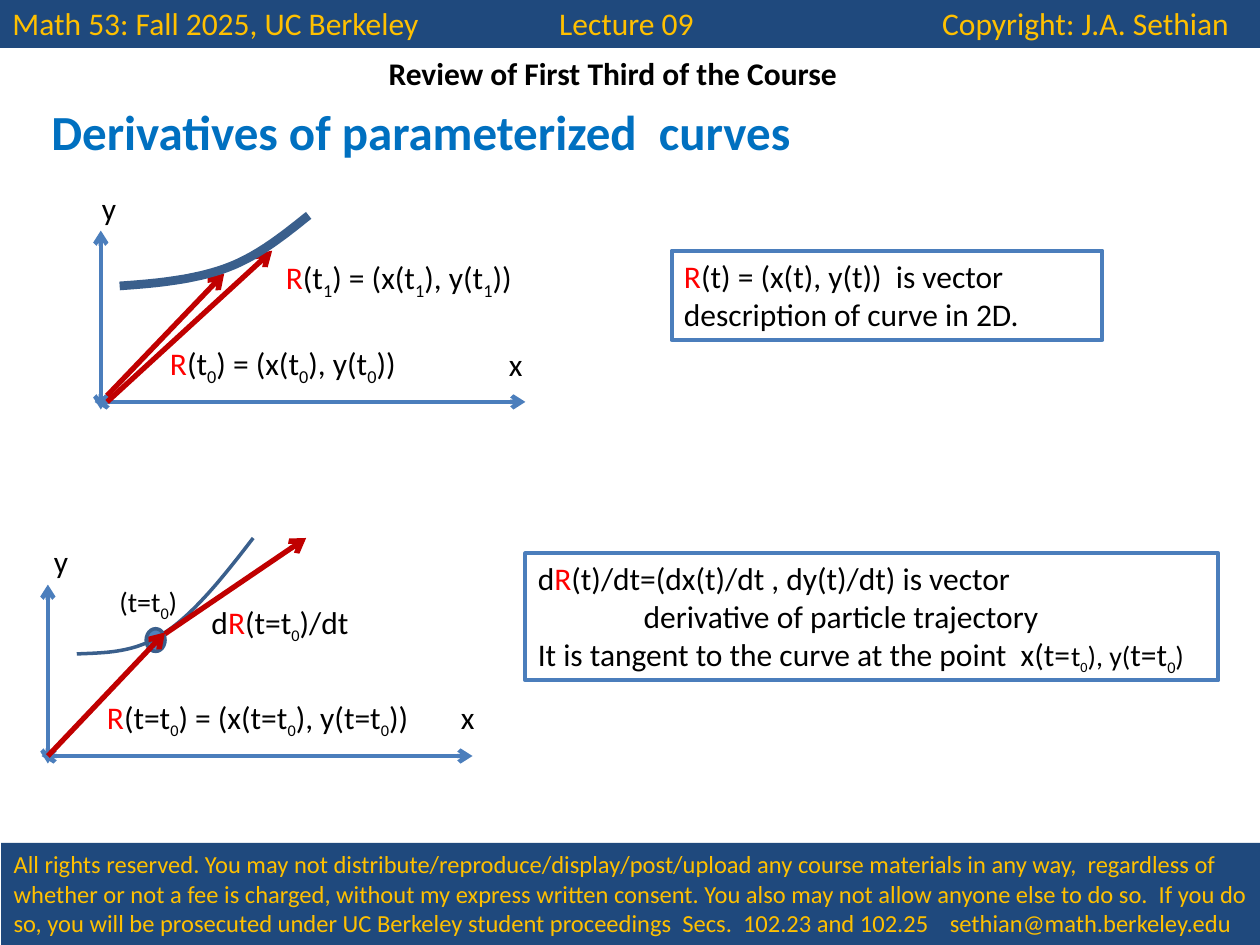
from dataclasses import dataclass

from lxml import etree
from pptx import Presentation
from pptx.dml.color import RGBColor
from pptx.enum.shapes import MSO_CONNECTOR, MSO_SHAPE
from pptx.enum.text import MSO_ANCHOR, MSO_AUTO_SIZE, PP_ALIGN
from pptx.oxml.ns import qn
from pptx.util import Inches, Pt

RECTANGLE, OVAL = MSO_SHAPE.RECTANGLE, MSO_SHAPE.OVAL
STRAIGHT = MSO_CONNECTOR.STRAIGHT
TOP, GROW = MSO_ANCHOR.TOP, MSO_AUTO_SIZE.SHAPE_TO_FIT_TEXT
LEFT, CENTER = PP_ALIGN.LEFT, PP_ALIGN.CENTER


@dataclass(frozen=True)
class Theme:
    font: str = "Calibri"
    bar: str = "1F497D"
    gold: str = "FFC000"
    ink: str = "000000"
    title: str = "0070C0"
    vector_name: str = "FF0000"
    vector: str = "C00000"
    axis: str = "4B7EBC"
    curve: str = "3A5F8C"
    point: str = "4F81BD"
    title_size: int = 28
    body_size: int = 18
    small_size: int = 16
    tiny_size: int = 14


THEME = Theme()


def color(value):
    return RGBColor.from_string(value)


def bezier(start, control_1, control_2, end, steps=24):
    """Points along a cubic curve, without its start."""
    for step in range(1, steps + 1):
        t = step / steps
        weights = ((1 - t) ** 3, 3 * t * (1 - t) ** 2, 3 * t * t * (1 - t), t ** 3)
        points = (start, control_1, control_2, end)
        yield tuple(sum(w * p[axis] for w, p in zip(weights, points)) for axis in (0, 1))


class SlideBuilder:
    def __init__(self, slide, theme):
        self.shapes = slide.shapes
        self.theme = theme

    def span(self, para, text, size, ink, bold=False, subscript=False):
        if not text:
            return
        run = para.add_run()
        run.text = text
        run.font.size = Pt(size)
        run.font.bold = bold
        run.font.color.rgb = color(ink)
        if subscript:
            run.font._element.set("baseline", "-25000")

    def formula(self, para, text, size, sub_size):
        """Write text with R in red and the character after _ lowered."""
        ink = self.theme.ink
        for index, piece in enumerate(text.split("_")):
            if index:
                self.span(para, piece[0], sub_size, ink, subscript=True)
                piece = piece[1:]
            before, name, after = piece.partition("R")
            self.span(para, before, size, ink)
            self.span(para, name, size, self.theme.vector_name)
            self.span(para, after, size, ink)

    def start_para(self, para, align=LEFT, tabs=(), indent=0):
        para.alignment = align
        properties = para._p.get_or_add_pPr()
        if indent:
            properties.set("marL", str(Inches(indent)))
        if tabs:
            tab_list = etree.SubElement(properties, qn("a:tabLst"))
            for tab in tabs:
                etree.SubElement(tab_list, qn("a:tab"), pos=str(Inches(tab)), algn="l")
        para.font.name = self.theme.font

    def frame(self, shape):
        frame = shape.text_frame
        frame.word_wrap = True
        frame.auto_size = GROW
        frame.vertical_anchor = TOP
        return frame

    def text_box(self, *place):
        return self.frame(self.shapes.add_textbox(*map(Inches, place)))

    def shape(self, kind, place, fill=None, line=None, width=0):
        shape = self.shapes.add_shape(kind, *map(Inches, place))
        shape.shadow.inherit = False
        self.paint(shape, fill, line, width)
        return shape

    def paint(self, shape, fill, line, width):
        if fill:
            shape.fill.solid()
            shape.fill.fore_color.rgb = color(fill)
        else:
            shape.fill.background()
        if line:
            shape.line.color.rgb = color(line)
            shape.line.width = Pt(width)
        else:
            shape.line.fill.background()

    def bar(self, place, text, size, tabs):
        frame = self.frame(self.shape(RECTANGLE, place, fill=self.theme.bar))
        para = frame.paragraphs[0]
        self.start_para(para, tabs=tabs)
        self.span(para, text, size, self.theme.gold)

    def heading(self, place, text, size, ink, align=LEFT):
        para = self.text_box(*place).paragraphs[0]
        self.start_para(para, align)
        self.span(para, text, size, ink, bold=True)

    def label(self, place, text, size, sub_size):
        para = self.text_box(*place).paragraphs[0]
        self.start_para(para)
        self.formula(para, text, size, sub_size)

    def note(self, place, lines):
        """Outlined box; each line is an indent and its sized pieces."""
        frame = self.frame(self.shape(RECTANGLE, place, line=self.theme.axis, width=2.25))
        for index, (indent, pieces) in enumerate(lines):
            para = frame.add_paragraph() if index else frame.paragraphs[0]
            self.start_para(para, indent=indent)
            for piece in pieces:
                self.formula(para, *piece)

    def arrow(self, start, end, ink, width, both=False):
        line = self.shapes.add_connector(STRAIGHT, *map(Inches, (*start, *end)))
        line.line.color.rgb = color(ink)
        line.line.width = Pt(width)
        outline = line.line._get_or_add_ln()
        for tag in ("a:headEnd", "a:tailEnd") if both else ("a:tailEnd",):
            etree.SubElement(outline, qn(tag), type="arrow")
        etree.SubElement(line._element.spPr, qn("a:effectLst"))

    def axes(self, x, y):
        for start, end in (((x - 0.05, y), (x + 3.37, y)), ((x, y + 0.06), (x, y - 1.36))):
            self.arrow(start, end, self.theme.axis, 2.5, both=True)

    def vector(self, start, end):
        self.arrow(start, end, self.theme.vector, 3)

    def curve(self, points, width):
        """Smooth path: a start, then two controls and an end per piece."""
        points = [(Inches(x), Inches(y)) for x, y in points]
        path = [p for i in range(0, len(points) - 1, 3) for p in bezier(*points[i:i + 4])]
        builder = self.shapes.build_freeform(*points[0])
        builder.add_line_segments(path, close=False)
        shape = builder.convert_to_shape()
        shape.shadow.inherit = False
        self.paint(shape, None, self.theme.curve, width)


def main():
    deck = Presentation()
    deck.slide_width, deck.slide_height = Inches(10), Inches(7.5)
    page = SlideBuilder(deck.slides.add_slide(deck.slide_layouts[6]), THEME)
    body, small, tiny = THEME.body_size, THEME.small_size, THEME.tiny_size

    # Header, footer and titles
    page.bar((0, -0.02, 10, 0.4),
             "Math 53: Fall 2025, UC Berkeley\tLecture 09\tCopyright: J.A. Sethian",
             body, (4.34, 7.38))
    page.bar((0.01, 6.69, 10, 0.81),
             "All rights reserved. You may not distribute/reproduce/display/post/upload any "
             "course materials in any way,  regardless of whether or not a fee is charged, "
             "without my express written consent. You also may not allow anyone else to do so.  "
             "If you do so, you will be prosecuted under UC Berkeley student proceedings  Secs.  "
             "102.23 and 102.25\tsethian@math.berkeley.edu", tiny, (7.43,))
    page.heading((1.5, 0.38, 6.73, 0.4), "Review of First Third of the Course",
                 body, THEME.ink, CENTER)
    page.heading((0.31, 0.76, 6.83, 0.57), "Derivatives of parameterized  curves",
                 THEME.title_size, THEME.title)

    # Upper plot: two position vectors
    page.axes(0.8, 3.19)
    page.vector((0.85, 3.14), (1.78, 2.17))
    page.vector((0.85, 3.19), (2.16, 1.99))
    page.curve([(0.95, 2.27), (1.25, 2.25), (1.54, 2.22), (1.79, 2.13),
                (2.04, 2.04), (2.25, 1.87), (2.45, 1.71)], 5)

    # Lower plot: position and tangent vector
    page.shape(OVAL, (1.16, 4.99, 0.15, 0.18), THEME.point, THEME.curve, 2)
    page.axes(0.38, 6)
    page.curve([(0.61, 5.19), (0.85, 5.18), (1.08, 5.18), (1.31, 5.02),
                (1.54, 4.87), (1.78, 4.57), (2.01, 4.27)], 2)
    page.vector((0.38, 6), (1.31, 5.02))
    page.vector((1.31, 5.03), (2.43, 4.27))

    # Plot labels
    for place, text, size, sub_size in (
        ((3.94, 2.69, 0.33, 0.4), "x", body, body),
        ((0.71, 1.45, 0.33, 0.4), "y", body, body),
        ((1.25, 2.68, 2.92, 0.4), "R(t_0) = (x(t_0), y(t_0))", body, body),
        ((2.17, 2, 2.92, 0.4), "R(t_1) = (x(t_1), y(t_1))", body, body),
        ((3.56, 5.49, 0.33, 0.4), "x", body, body),
        ((0.33, 4.25, 0.33, 0.4), "y", body, body),
        ((0.75, 5.49, 2.81, 0.4), "R(t=t_0) = (x(t=t_0), y(t=t_0))", body, small),
        ((1.58, 4.74, 1.55, 0.4), "dR(t=t_0)/dt", body, small),
        ((0.85, 4.59, 0.73, 0.37), "(t=t_0)", small, small),
    ):
        page.label(place, text, size, sub_size)

    # Explanations
    page.note((5.33, 1.99, 3.42, 0.71), [
        (0, [("R(t) = (x(t), y(t))  is vector description of curve in 2D.", body, body)]),
    ])
    page.note((4.17, 4.39, 5.5, 1.01), [
        (0, [("dR(t)/dt=(dx(t)/dt , dy(t)/dt) is vector", body, body)]),
        (0.84, [("derivative of particle trajectory", body, body)]),
        (0, [("It is tangent to the curve at the point  x(t=", body, body),
             ("t_0), y(", small, tiny), ("t=t_0", body, small), (")", small, small)]),
    ])

    deck.save("out.pptx")


if __name__ == "__main__":
    main()
